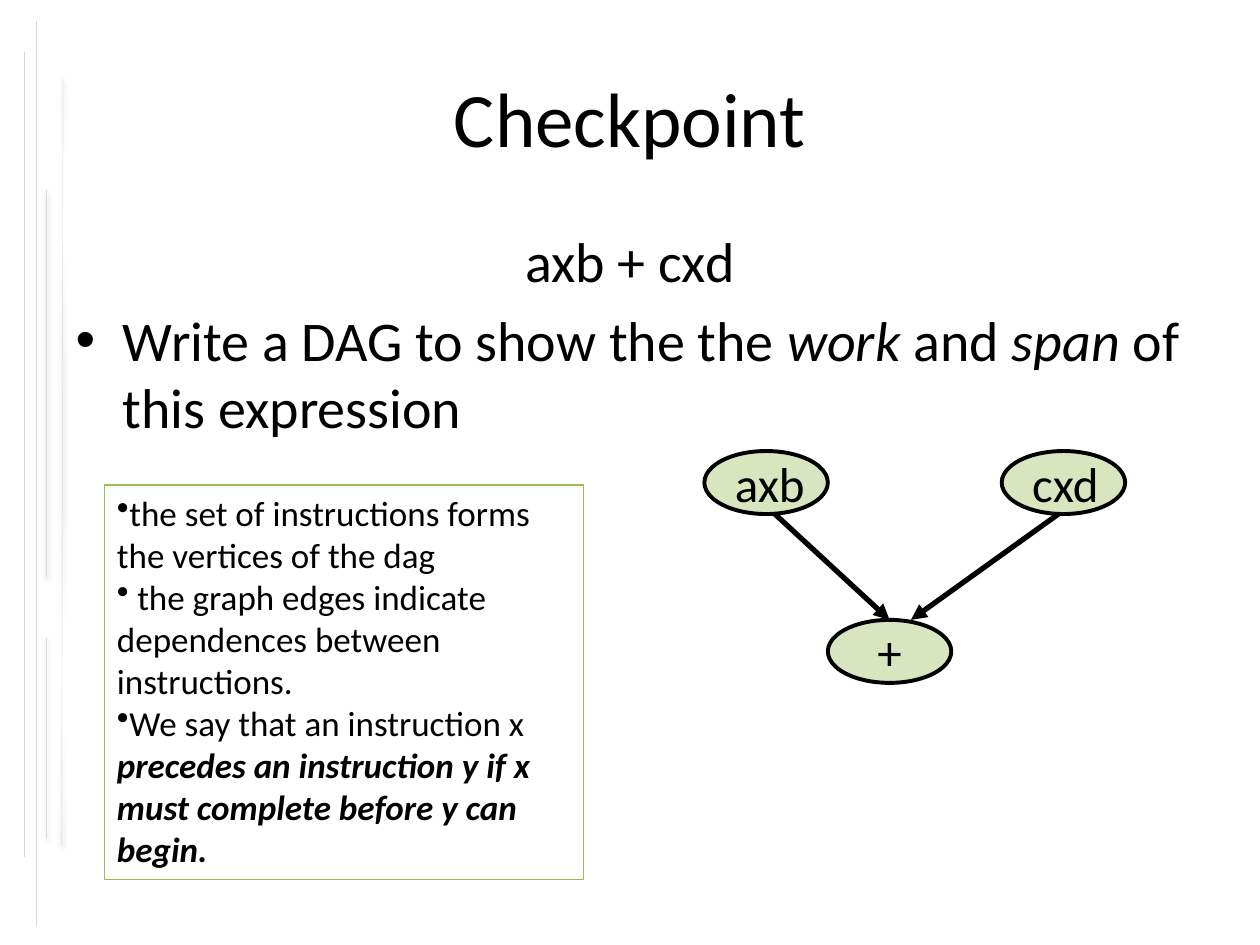
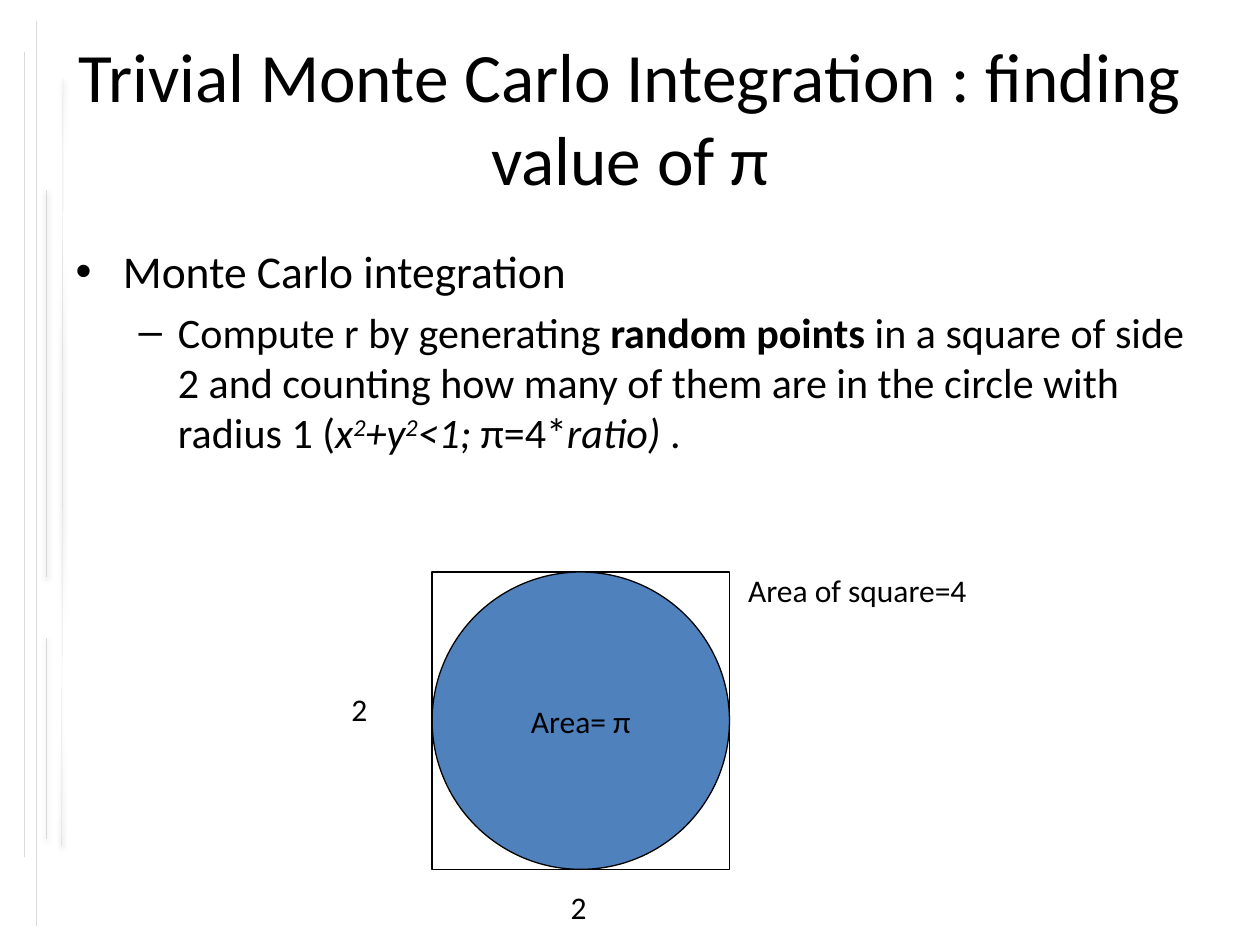
from dataclasses import dataclass

from lxml.etree import SubElement
from pptx import Presentation
from pptx.dml.color import RGBColor as Color
from pptx.enum.shapes import MSO_CONNECTOR as Connector, MSO_SHAPE as Shape
from pptx.enum.text import MSO_ANCHOR as Anchor, MSO_AUTO_SIZE as AutoSize, PP_ALIGN as Align
from pptx.oxml.ns import qn
from pptx.util import Inches, Pt


@dataclass(frozen=True)
class Theme:
    """Colours, font and type sizes shared by the slides."""

    font: str = "Calibri"
    ink: str = "000000"
    band: str = "D9D9D9"
    green: str = "9BBB59"
    blue: str = "4F81BD"
    title: float = 44
    long_title: float = 39.6
    body: float = 32
    topic: float = 26
    detail: float = 24
    node: float = 28
    note: float = 20
    label: float = 18


THEME = Theme()
BANDS = [
    (0.5, 0.62, 0.49, 6.71),
    (0.19, 0.41, 0.19, 6.8),
    (0.37, 1.51, 0.37, 4.58),
    (0.29, 0.17, 0.29, 7.35),
    (0.37, 5.06, 0.37, 6.66),
]
NODE_WIDTH, NODE_HEIGHT = 0.98, 0.5


def place(shape, left, top, width, height):
    """Move and size a shape in inches."""
    shape.left, shape.top = Inches(left), Inches(top)
    shape.width, shape.height = Inches(width), Inches(height)


def set_bullet(para, mark):
    """Give a paragraph a bullet mark, or none for an empty mark."""
    props = para._p.get_or_add_pPr()
    if mark:
        SubElement(props, qn("a:buChar"), char=mark)
    else:
        SubElement(props, qn("a:buNone"))


def write(para, spans, size, align=Align.LEFT):
    """Fill a paragraph from (text, style) spans: b bold, i italic, ^ superscript."""
    para.alignment = align
    para.font.name = THEME.font
    para.font.size = Pt(size)
    para.font.color.rgb = Color.from_string(THEME.ink)
    for text, style in spans:
        span = para.add_run()
        span.text = text
        if "b" in style:
            span.font.bold = True
        if "i" in style:
            span.font.italic = True
        if "^" in style:
            span._r.get_or_add_rPr().set("baseline", "30000")


def add_line(page, ends, color, width):
    """Draw a straight line without a shadow between two points."""
    line = page.shapes.add_connector(Connector.STRAIGHT, *map(Inches, ends))
    line.line.color.rgb = Color.from_string(color)
    line.line.width = Pt(width)
    SubElement(line.element.spPr, qn("a:effectLst"))
    return line


def add_arrow(page, *ends):
    """Draw a graph edge with a triangle at its end."""
    arrow = add_line(page, ends, THEME.ink, 3)
    SubElement(arrow.line._get_or_add_ln(), qn("a:tailEnd"), type="triangle")


def add_bands(deck, page):
    """Draw the shadowed side lines and move them to the slide master."""
    for number, ends in enumerate(BANDS):
        band = add_line(page, ends, THEME.band, 0.25)
        effects = band.element.spPr.find(qn("a:effectLst"))
        shadow = SubElement(effects, qn("a:outerShdw"), blurRad=str(Pt(3.1)),
                            dist=str(Pt(1.6)), dir="5400000", rotWithShape="0")
        tint = SubElement(shadow, qn("a:srgbClr"), val=THEME.ink)
        SubElement(tint, qn("a:alpha"), val="38000")
        band.element.nvCxnSpPr.cNvPr.id = 20 + number
        deck.slide_master.shapes.element.append(band.element)


def add_figure(page, kind, bounds, fill=None, opacity=100, line=THEME.ink, width=0.75):
    """Add an outlined shape with an optional, possibly translucent, fill."""
    figure = page.shapes.add_shape(kind, *map(Inches, bounds))
    figure.shadow.inherit = False
    figure.line.color.rgb = Color.from_string(line)
    figure.line.width = Pt(width)
    if fill is None:
        figure.fill.background()
        return figure
    figure.fill.solid()
    figure.fill.fore_color.rgb = Color.from_string(fill)
    if opacity < 100:
        tint = figure.element.spPr.find(qn("a:solidFill"))[0]
        SubElement(tint, qn("a:alpha"), val=str(opacity * 1000))
    return figure


def add_node(page, text, left, top, align=Align.LEFT):
    """Add a vertex of the graph."""
    node = add_figure(page, Shape.OVAL, (left, top, NODE_WIDTH, NODE_HEIGHT),
                      THEME.green, 38, width=2.25)
    node.text_frame.word_wrap = False
    write(node.text_frame.paragraphs[0], [(text, "")], THEME.node, align)


def add_label(page, text, left, top, width):
    """Add a one-line label beside the figure."""
    label = page.shapes.add_textbox(*map(Inches, (left, top, width, 0.4)))
    label.text_frame.word_wrap = False
    label.text_frame.auto_size = AutoSize.SHAPE_TO_FIT_TEXT
    write(label.text_frame.paragraphs[0], [(text, "")], THEME.label)


def add_page(deck, title, size, body_top, body_height):
    """Add a slide with its title and return it with its body text frame."""
    page = deck.slides.add_slide(deck.slide_layouts[1])
    heading, body = page.placeholders
    place(heading, 0.5, 0.3, 9, 1.25)
    place(body, 0.5, body_top, 9, body_height)
    heading.text_frame.vertical_anchor = Anchor.MIDDLE
    for shape in (heading, body):
        shape.text_frame.auto_size = AutoSize.NONE
    write(heading.text_frame.paragraphs[0], [(title, "")], size, Align.CENTER)
    return page, body.text_frame


def add_notes_box(page):
    """Add the outlined box that explains the graph."""
    notes = [
        [("the set of instructions forms the vertices of the dag", "")],
        [(" the graph edges indicate dependences between instructions.", "")],
        [("We say that an instruction x ", ""),
         ("precedes an instruction y if x must complete before y can begin.", "bi")],
    ]
    box = add_figure(page, Shape.RECTANGLE, (0.83, 3.85, 3.8, 3.13), line=THEME.green)
    frame = box.text_frame
    frame.word_wrap = True
    frame.vertical_anchor = Anchor.TOP
    frame.auto_size = AutoSize.SHAPE_TO_FIT_TEXT
    for index, spans in enumerate(notes):
        para = frame.add_paragraph() if index else frame.paragraphs[0]
        set_bullet(para, "•")
        write(para, spans, THEME.note)


def build_checkpoint(deck):
    """Build the slide with the expression graph."""
    page, body = add_page(deck, "Checkpoint", THEME.title, 1.75, 4.95)
    add_bands(deck, page)
    expression = body.paragraphs[0]
    set_bullet(expression, "")
    write(expression, [("axb + cxd", "")], THEME.body, Align.CENTER)
    write(body.add_paragraph(), [
        ("Write a DAG to show the the ", ""), ("work", "i"), (" and ", ""),
        ("span", "i"), (" of this expression", ""),
    ], THEME.body)
    product_top, sum_top = 3.58, 4.92
    product_bottom = product_top + NODE_HEIGHT
    add_node(page, "axb", 5.59, product_top)
    add_arrow(page, 6.15, product_bottom, 7.06, sum_top)
    add_node(page, "+", 6.57, sum_top, Align.CENTER)
    add_node(page, "cxd", 7.95, product_top)
    add_arrow(page, 8.4, product_bottom, 7.23, sum_top)
    add_notes_box(page)


def build_monte_carlo(deck):
    """Build the slide with the circle inside the square."""
    page, body = add_page(deck, "Trivial Monte Carlo Integration : finding value of π",
                          THEME.long_title, 1.88, 2.18)
    write(body.paragraphs[0], [("Monte Carlo integration", "")], THEME.topic)
    detail = body.add_paragraph()
    detail.level = 1
    write(detail, [
        ("Compute r by generating ", ""), ("random points", "b"),
        (" in a square of side 2 and counting how many of them are in the circle"
         " with radius 1 (", ""),
        ("x", "i"), ("2", "i^"), ("+y", "i"), ("2", "i^"), ("<1; ", "i"),
        ("π=4*", ""), ("ratio)", "i"), (" .", ""),
    ], THEME.detail)
    square = (3.43, 4.54, 2.36, 2.36)
    add_figure(page, Shape.RECTANGLE, square)
    circle = add_figure(page, Shape.OVAL, square, THEME.blue)
    circle.text_frame.word_wrap = False
    write(circle.text_frame.paragraphs[0], [("Area= π", "")], THEME.label, Align.CENTER)
    add_label(page, "2", 2.69, 5.43, 0.34)
    add_label(page, "2", 4.43, 7, 0.34)
    add_label(page, "Area of square=4", 5.84, 4.48, 2.13)


def main():
    """Build and save the deck."""
    deck = Presentation()
    deck.slide_width, deck.slide_height = Inches(10), Inches(7.5)
    build_checkpoint(deck)
    build_monte_carlo(deck)
    deck.save("out.pptx")


if __name__ == "__main__":
    main()
